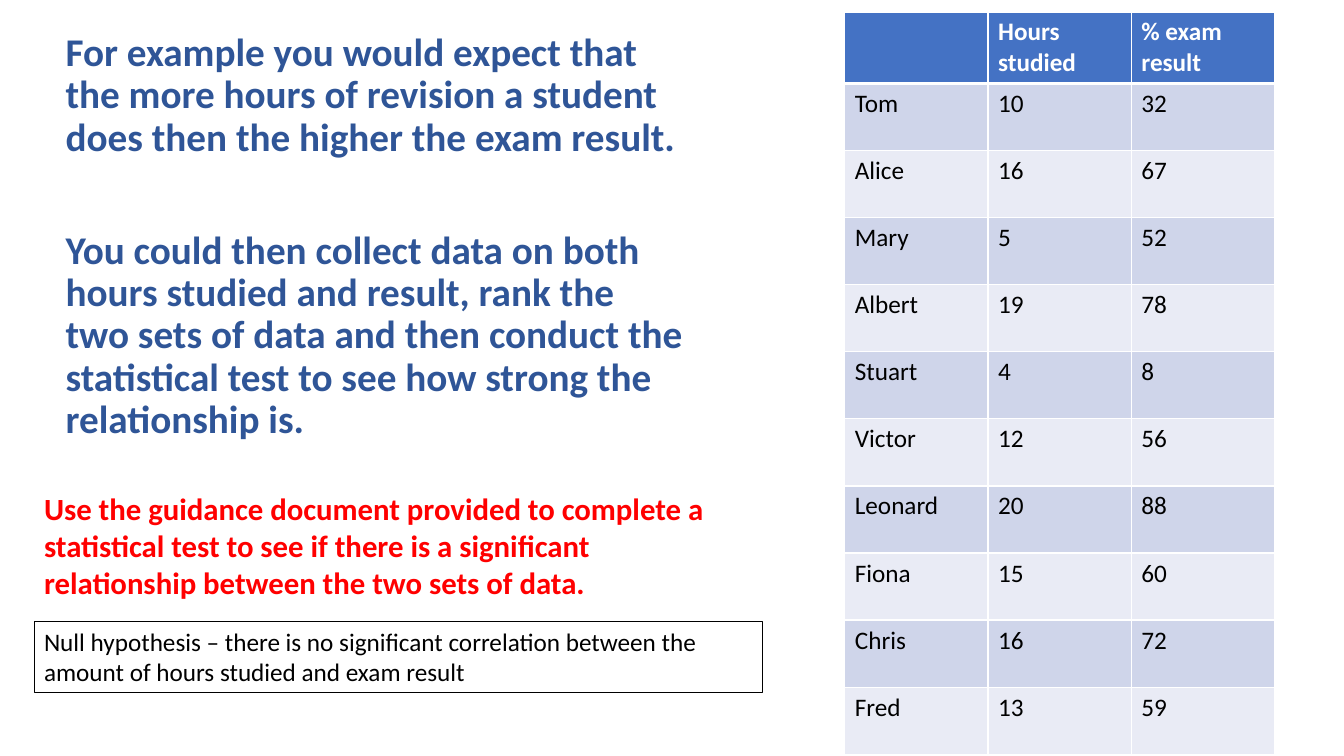
"""Build a slide on correlating hours studied with exam results."""
from dataclasses import dataclass
from typing import Any

from lxml import etree
from pptx import Presentation
from pptx import util as u
from pptx.dml.color import RGBColor
from pptx.enum import shapes, text
from pptx.oxml import ns

COLOURS = {"body": "2F5597", "task": "FF0000", "ink": "000000", "white": "FFFFFF",
           "header": "4472C4", "odd": "CFD5EA", "even": "E9EBF5"}
FONT = "Calibri"
FRAME = {"word_wrap": True, "auto_size": text.MSO_AUTO_SIZE.NONE,
         "vertical_anchor": text.MSO_ANCHOR.TOP}
BODY_PARAGRAPH = {"line_spacing": 0.9, "space_before": u.Pt(10)}

EXPECTATION = ("For example you would expect that the more hours of revision a student "
               "does then the higher the exam result.")
METHOD = ("You could then collect data on both hours studied and result, rank the two sets "
          "of data and then conduct the statistical test to see how strong the relationship is.")
TASK = ("Use the guidance document provided to complete a statistical test to see if there "
        "is a significant relationship between the two sets of data.")
HYPOTHESIS = ("Null hypothesis – there is no significant correlation between the amount of "
              "hours studied and exam result")


@dataclass(frozen=True)
class Box:
    """Position and size in centimetres."""
    left: float
    top: float
    width: float
    height: float

    def lengths(self) -> list[u.Cm]:
        """Return the four values as lengths."""
        return [u.Cm(v) for v in (self.left, self.top, self.width, self.height)]


@dataclass(frozen=True)
class Style:
    """Look of a run of text."""
    size: int
    colour: str
    bold: bool = False


@dataclass(frozen=True)
class Student:
    """One row of the results table."""
    name: str
    hours: int
    result: int


STUDENTS = [Student("Tom", 10, 32), Student("Alice", 16, 67), Student("Mary", 5, 52),
            Student("Albert", 19, 78), Student("Stuart", 4, 8), Student("Victor", 12, 56),
            Student("Leonard", 20, 88), Student("Fiona", 15, 60), Student("Chris", 16, 72),
            Student("Fred", 13, 59)]
HEADINGS = ("", "Hours studied", "% exam result")
BODY_BOX = Box(1.4, 0.69, 16.05, 12.09)
TASK_BOX = Box(0.86, 12.22, 17.73, 3.07)
HYPOTHESIS_BOX = Box(0.86, 15.65, 18.36, 1.8)
HEADER_HEIGHT, ROW_HEIGHT, COLUMN_WIDTH = 1.77, 1.69, 3.61
TABLE_BOX = Box(21.29, 0.3, COLUMN_WIDTH * len(HEADINGS),
                HEADER_HEIGHT + ROW_HEIGHT * len(STUDENTS))


def rgb(name: str) -> RGBColor:
    """Look up a colour by name."""
    return RGBColor.from_string(COLOURS[name])


def apply(target: Any, values: dict[str, Any]) -> None:
    """Set each attribute named in values."""
    for name, value in values.items():
        setattr(target, name, value)


def write(p: Any, wording: str, style: Style) -> None:
    """Add a left-aligned, formatted run to a paragraph."""
    p.alignment = text.PP_ALIGN.LEFT
    r = p.add_run()
    r.text = wording
    apply(r.font, {"name": FONT, "size": u.Pt(style.size), "bold": style.bold})
    r.font.color.rgb = rgb(style.colour)


def fill_body(sp: Any) -> None:
    """Place the body text without bullets."""
    apply(sp, dict(zip(("left", "top", "width", "height"), BODY_BOX.lengths())))
    tf = sp.text_frame
    apply(tf, FRAME)
    for p, wording, before in ((tf.paragraphs[0], EXPECTATION, 10),
                               (tf.add_paragraph(), METHOD, 50.5)):
        write(p, wording, Style(28, "body", True))
        apply(p, BODY_PARAGRAPH | {"space_before": u.Pt(before)})
        pPr = p._p.get_or_add_pPr()
        pPr.set("marL", "0")
        pPr.set("indent", "0")
        etree.SubElement(pPr, ns.qn("a:buNone"))


def add_border(cell: Any, side: str, width: float) -> None:
    """Add a white border to one side of a cell."""
    ln = etree.SubElement(cell._tc.get_or_add_tcPr(), ns.qn(f"a:ln{side}"), w=str(u.Pt(width)))
    solid = etree.SubElement(ln, ns.qn("a:solidFill"))
    etree.SubElement(solid, ns.qn("a:srgbClr"), val=COLOURS["white"])


def add_results(s: Any) -> None:
    """Add the table of hours and results."""
    rows = [HEADINGS] + [(st.name, str(st.hours), str(st.result)) for st in STUDENTS]
    table = s.shapes.add_table(len(rows), len(HEADINGS), *TABLE_BOX.lengths()).table
    for column in table.columns:
        column.width = u.Cm(COLUMN_WIDTH)
    for i, row in enumerate(rows):
        table.rows[i].height = u.Cm(ROW_HEIGHT if i else HEADER_HEIGHT)
        fill = ("odd" if i % 2 else "even") if i else "header"
        style = Style(18, "ink") if i else Style(18, "white", True)
        for j, wording in enumerate(row):
            cell = table.cell(i, j)
            for side in "LRTB":
                add_border(cell, side, 3 if (i, side) in ((0, "B"), (1, "T")) else 1)
            cell.fill.solid()
            cell.fill.fore_color.rgb = rgb(fill)
            if wording:
                write(cell.text_frame.paragraphs[0], wording, style)


def add_task(s: Any) -> None:
    """Add the red instruction."""
    tf = s.shapes.add_textbox(*TASK_BOX.lengths()).text_frame
    apply(tf, FRAME)
    write(tf.paragraphs[0], TASK, Style(22, "task", True))


def add_hypothesis(s: Any) -> None:
    """Add the outlined null hypothesis."""
    sp = s.shapes.add_shape(shapes.MSO_SHAPE.RECTANGLE, *HYPOTHESIS_BOX.lengths())
    sp.shadow.inherit = False
    sp.fill.background()
    sp.line.color.rgb = rgb("ink")
    sp.line.width = u.Pt(0.75)
    apply(sp.text_frame, FRAME)
    write(sp.text_frame.paragraphs[0], HYPOTHESIS, Style(18, "ink"))


def main() -> None:
    """Build and save the slide."""
    prs = Presentation()
    apply(prs, {"slide_width": u.Cm(33.87), "slide_height": u.Cm(19.05)})
    s = prs.slides.add_slide(prs.slide_layouts[1])
    title = s.shapes.title.element
    title.getparent().remove(title)
    fill_body(s.placeholders[1])
    add_results(s)
    add_task(s)
    add_hypothesis(s)
    prs.save("out.pptx")


if __name__ == "__main__":
    main()
